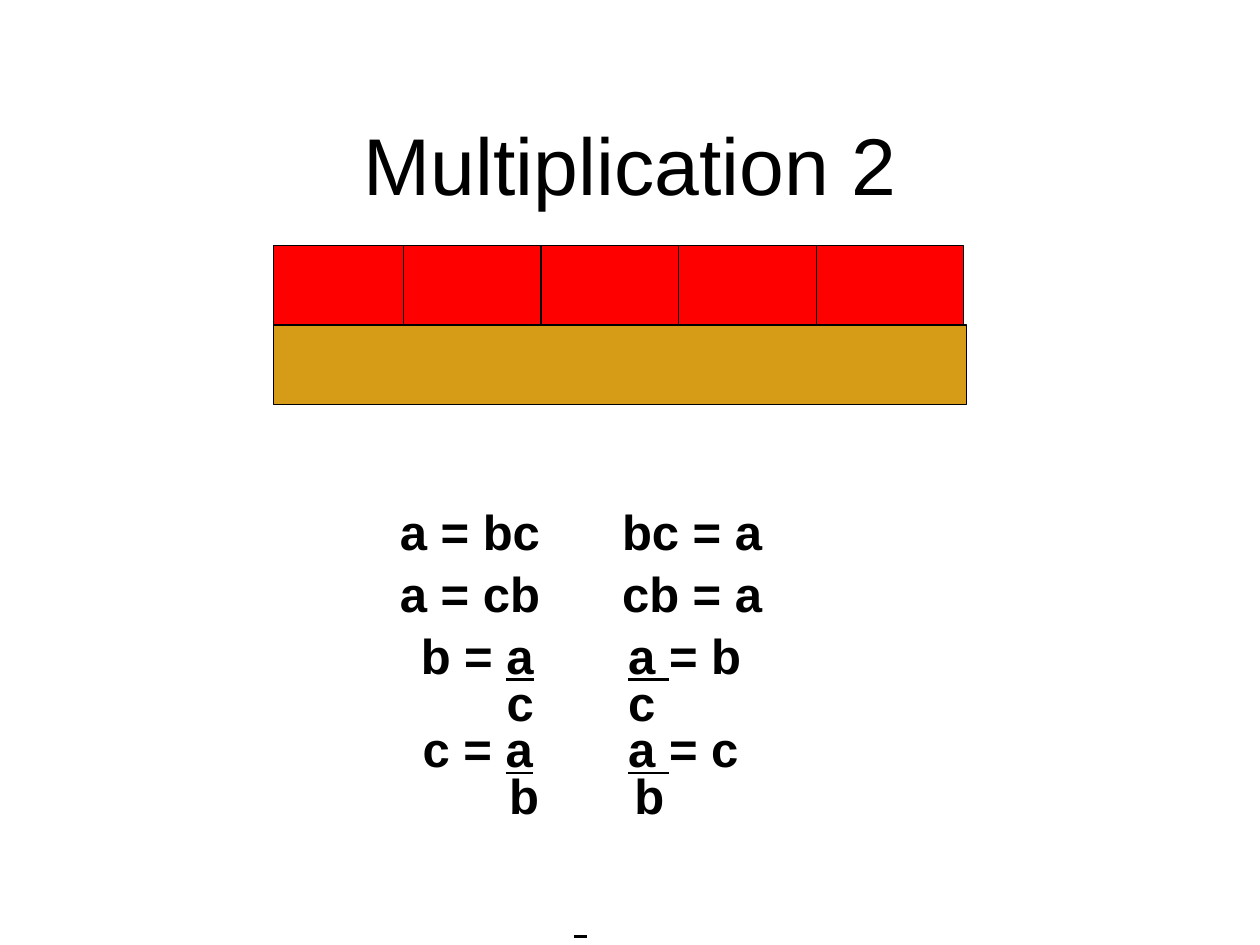
from pptx import Presentation
from pptx.dml.color import RGBColor
from pptx.enum.shapes import MSO_CONNECTOR, MSO_SHAPE
from pptx.enum.text import MSO_ANCHOR, PP_ALIGN
from pptx.util import Pt
from lxml import etree

RECTANGLE = MSO_SHAPE.RECTANGLE
STRAIGHT = MSO_CONNECTOR.STRAIGHT
LEFT, CENTER = PP_ALIGN.LEFT, PP_ALIGN.CENTER
TOP, MIDDLE = MSO_ANCHOR.TOP, MSO_ANCHOR.MIDDLE
DRAWING = "{http://schemas.openxmlformats.org/drawingml/2006/main}"
COLORS = {"ink": "000000", "red": "FF0000", "gold": "D69B17"}

deck = Presentation()
deck.slide_width, deck.slide_height = Pt(720), Pt(540)
page = deck.slides.add_slide(deck.slide_layouts[6])


def add_bar(left, top, width, color):
    bar = page.shapes.add_shape(RECTANGLE, Pt(left), Pt(top), Pt(width), Pt(45.4))
    bar.shadow.inherit = False
    bar.fill.solid()
    bar.fill.fore_color.rgb = RGBColor.from_string(COLORS[color])
    bar.line.color.rgb = RGBColor.from_string(COLORS["ink"])
    bar.line.width = Pt(0.75)


def add_text(left, top, width, height, anchor, lines, align, **formats):
    box = page.shapes.add_textbox(Pt(left), Pt(top), Pt(width), Pt(height))
    frame = box.text_frame
    frame.word_wrap = True
    frame.vertical_anchor = anchor
    for index, (spacing, stops, spans) in enumerate(lines):
        para = frame.paragraphs[0] if index == 0 else frame.add_paragraph()
        para.alignment = align
        para.line_spacing = spacing
        if stops:
            tabs = etree.SubElement(para._p.get_or_add_pPr(), DRAWING + "tabLst")
            for stop in stops:
                etree.SubElement(tabs, DRAWING + "tab", pos=str(Pt(stop)), algn="l")
        for text, underline in spans:
            span = para.add_run()
            span.text = text
            span.font.color.rgb = RGBColor.from_string(COLORS["ink"])
            for name, value in {"name": "Arial", "underline": underline, **formats}.items():
                setattr(span.font, name, value)


# Title
add_text(54, 48.2, 612, 90, MIDDLE, [(1.0, (), [("Multiplication 2", False)])],
         CENTER, size=Pt(46))

# One long bar below five short ones
add_bar(156.2, 185.8, 396, "gold")
add_bar(156.2, 140.4, 76.3, "red")
for index, width in enumerate((80.6, 80.6, 80.6, 84.2)):
    add_bar(230.4 + 78.7 * index, 140.4, width, "red")

# Equations in two columns: line spacing, tab stops, (text, underlined)
LOOSE, TIGHT = 1.05, 0.79
equations = [
    (LOOSE, (69.5, 196.5), [("\ta = bc\tbc = a", False)]),
    (LOOSE, (69.5, 196.5), [("\ta = cb\tcb = a", False)]),
    (LOOSE, (81.5, 200), [("\tb = ", False), ("a", True), ("\t", False),
                          ("a ", True), ("= b", False)]),
    (TIGHT, (130.5, 200), [("\tc\tc", False)]),
    (TIGHT, (82.5, 200), [("\tc = ", False), ("a", True), ("\t", False),
                          ("a ", True), ("= c", False)]),
    (TIGHT, (132, 203.5), [("\tb\tb", False)]),
]
add_text(151.9, 281.5, 360, 250, TOP, equations, LEFT, size=Pt(28), bold=True)

# Short dash at the foot
dash = page.shapes.add_connector(STRAIGHT, Pt(328), Pt(535), Pt(335.5), Pt(535))
dash.line.color.rgb = RGBColor.from_string(COLORS["ink"])
dash.line.width = Pt(1.5)
etree.SubElement(dash._element.spPr, DRAWING + "effectLst")

deck.save("out.pptx")
